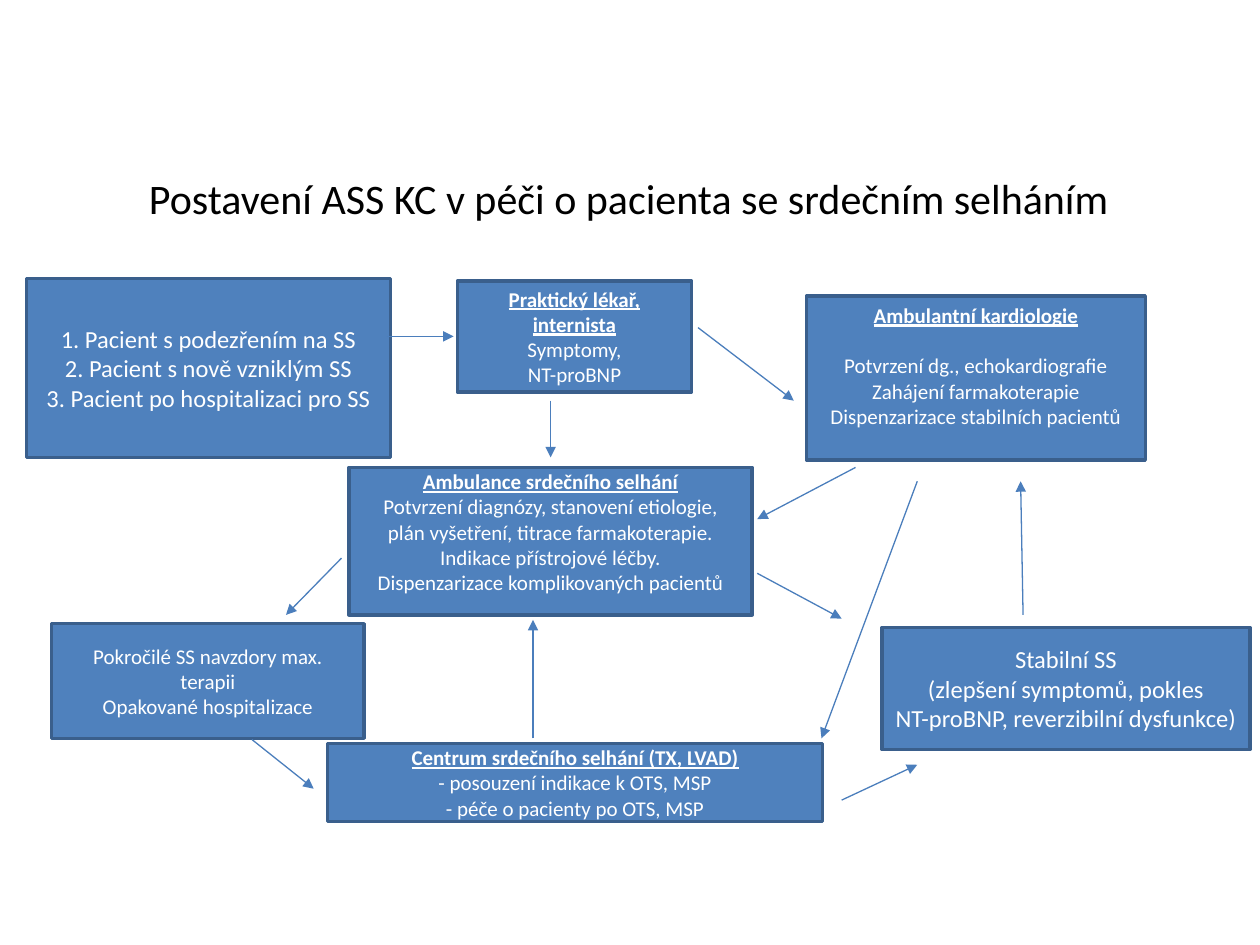
from dataclasses import dataclass

from lxml.etree import SubElement
from pptx import Presentation
from pptx.dml.color import RGBColor
from pptx.enum.shapes import MSO_CONNECTOR, MSO_SHAPE
from pptx.enum.text import MSO_ANCHOR, PP_ALIGN
from pptx.oxml.ns import qn
from pptx.util import Inches, Pt


@dataclass(frozen=True)
class Theme:
    font: str = "Calibri"
    ink: RGBColor = RGBColor(0, 0, 0)
    box_ink: RGBColor = RGBColor(0xFF, 0xFF, 0xFF)
    box_fill: RGBColor = RGBColor(0x4F, 0x81, 0xBD)
    box_edge: RGBColor = RGBColor(0x3A, 0x5F, 0x8C)
    arrow: RGBColor = RGBColor(0x4B, 0x7E, 0xBC)
    title_size: int = 24
    large: int = 14
    small: int = 12
    edge_width: float = 2
    arrow_width: float = 0.75


THEME = Theme()
SLIDE_WIDTH, SLIDE_HEIGHT = Inches(10), Inches(7.5)
COLUMNS, ROWS = 100, 75


def across(columns):
    return round(SLIDE_WIDTH * columns / COLUMNS)


def down(rows):
    return round(SLIDE_HEIGHT * rows / ROWS)


def place(left, top, width, height):
    return across(left), down(top), across(width), down(height)


def write(frame, lines, size, color, headed=False):
    frame.word_wrap = True
    frame.vertical_anchor = MSO_ANCHOR.MIDDLE
    frame.text = "\n".join(lines)
    for index, paragraph in enumerate(frame.paragraphs):
        paragraph.alignment = PP_ALIGN.CENTER
        for run in paragraph.runs:
            run.font.name = THEME.font
            run.font.size = Pt(size)
            run.font.color.rgb = color
            if headed and index == 0:
                run.font.bold = run.font.underline = True


def add_title(slide, area, wording):
    title = slide.shapes.add_textbox(*place(*area))
    write(title.text_frame, [wording], THEME.title_size, THEME.ink)


def add_box(slide, area, lines, size=THEME.small, headed=False, heading_gap=0, foot=0):
    box = slide.shapes.add_shape(MSO_SHAPE.RECTANGLE, *place(*area))
    box.shadow.inherit = False
    box.fill.solid()
    box.fill.fore_color.rgb = THEME.box_fill
    box.line.color.rgb = THEME.box_edge
    box.line.width = Pt(THEME.edge_width)
    frame = box.text_frame
    frame.margin_top, frame.margin_bottom = 0, down(foot)
    write(frame, lines, size, THEME.box_ink, headed)
    frame.paragraphs[0].space_after = Pt(heading_gap)


def add_arrow(slide, start, end):
    arrow = slide.shapes.add_connector(
        MSO_CONNECTOR.STRAIGHT,
        across(start[0]), down(start[1]), across(end[0]), down(end[1]),
    )
    arrow.line.color.rgb = THEME.arrow
    arrow.line.width = Pt(THEME.arrow_width)
    SubElement(arrow.line._get_or_add_ln(), qn("a:tailEnd"), type="triangle")
    SubElement(arrow._element.spPr, qn("a:effectLst"))


def add_boxes(slide):
    add_box(slide, (27.7, 37.1, 32, 11.7), [
        "Ambulance srdečního selhání",
        "Potvrzení diagnózy, stanovení etiologie,",
        "plán vyšetření, titrace farmakoterapie.",
        "Indikace přístrojové léčby.",
        "Dispenzarizace komplikovaných pacientů",
    ], headed=True, foot=1.5)
    add_box(slide, (2.1, 22.1, 28.9, 14.2), [
        "1. Pacient s podezřením na SS",
        "2. Pacient s nově vzniklým SS",
        "3. Pacient po hospitalizaci pro SS",
    ], THEME.large)
    add_box(slide, (64, 23.5, 26.9, 13), [
        "Ambulantní kardiologie",
        "Potvrzení dg., echokardiografie",
        "Zahájení farmakoterapie",
        "Dispenzarizace stabilních pacientů",
    ], headed=True, heading_gap=14.6, foot=2)
    add_box(slide, (36.3, 22.3, 18.6, 8.8), [
        "Praktický lékař, internista",
        "Symptomy,",
        "NT-proBNP",
    ], headed=True)
    add_box(slide, (26, 59, 39.3, 6.2), [
        "Centrum srdečního selhání (TX, LVAD)",
        "- posouzení indikace k OTS, MSP",
        "- péče o pacienty po OTS, MSP",
    ], headed=True)
    add_box(slide, (4.1, 49.5, 24.8, 9.1), [
        "Pokročilé SS navzdory max. terapii",
        "Opakované hospitalizace",
    ])
    add_box(slide, (70, 49.8, 29.2, 9.7), [
        "Stabilní SS",
        "(zlepšení symptomů, pokles",
        "NT-proBNP, reverzibilní dysfunkce)",
    ], THEME.large)


def add_arrows(slide):
    routes = [
        ((30.7, 26.7), (36, 26.7)),
        ((55.4, 26), (63, 31.8)),
        ((67.9, 37.1), (60.1, 41.2)),
        ((27.1, 44.3), (22.7, 48.8)),
        ((60.1, 45.5), (66.8, 49.1)),
        ((20, 58.7), (24.9, 62.6)),
        ((81.2, 48.8), (81, 38.2)),
        ((42.3, 58.6), (42.3, 49.2)),
        ((72.8, 38.2), (65.2, 58.6)),
        ((43.7, 31.8), (43.7, 36.3)),
        ((66.8, 63.5), (72.8, 60.7)),
    ]
    for start, end in routes:
        add_arrow(slide, start, end)


def main():
    deck = Presentation()
    deck.slide_width, deck.slide_height = SLIDE_WIDTH, SLIDE_HEIGHT
    slide = deck.slides.add_slide(deck.slide_layouts[6])
    add_title(slide, (6.8, 10.2, 86.2, 10.9),
              "Postavení ASS KC v péči o pacienta se srdečním selháním")
    add_boxes(slide)
    add_arrows(slide)
    deck.save("out.pptx")


if __name__ == "__main__":
    main()
